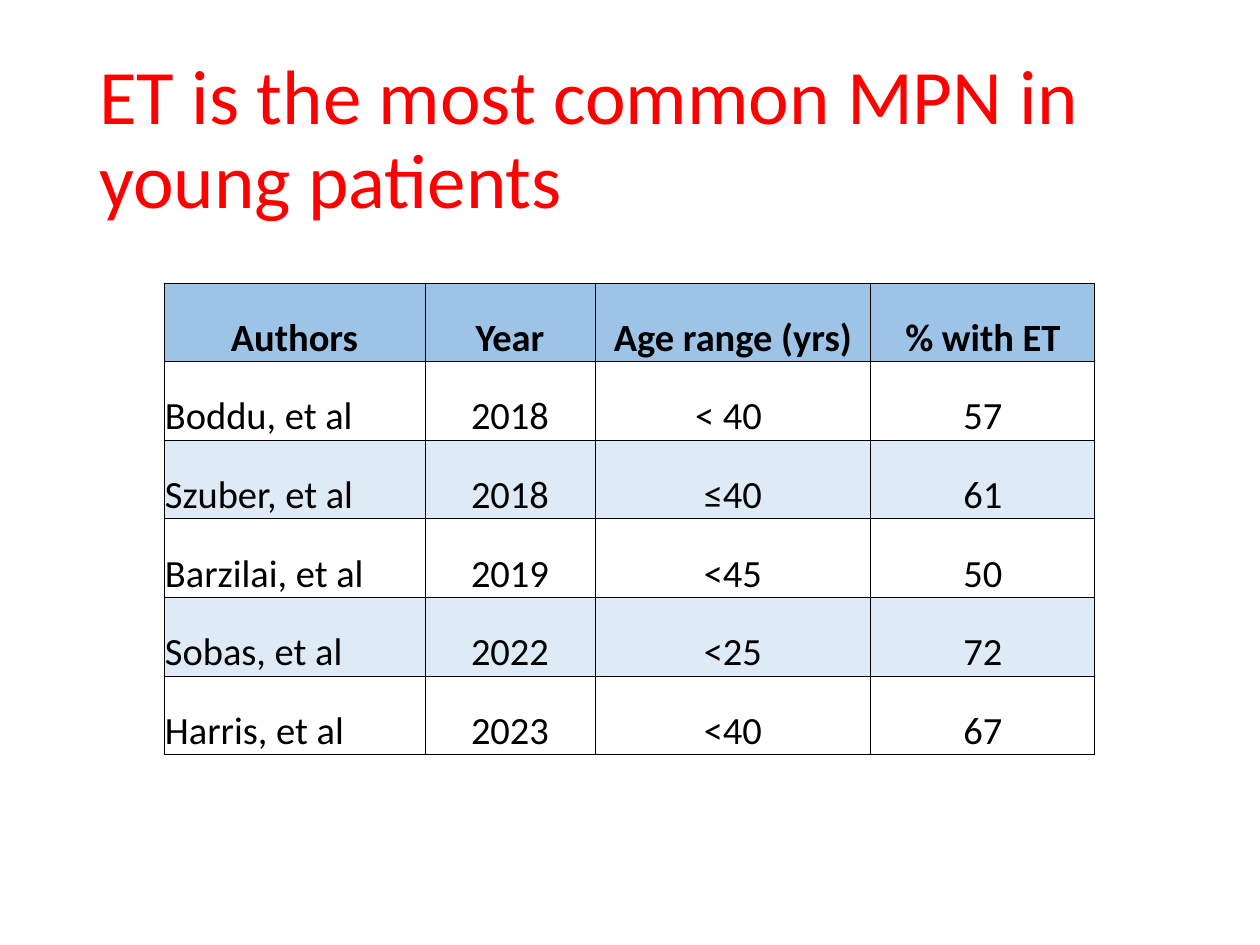
from dataclasses import dataclass

from pptx import Presentation
from pptx.dml.color import RGBColor as RGB
from pptx.enum.text import MSO_ANCHOR as ANCHOR, PP_ALIGN as ALIGN
from pptx.oxml import parse_xml
from pptx.oxml.ns import nsdecls
from pptx.util import Pt

TITLE = "ET is the most common MPN in young patients"
HEADER = ("Authors", "Year", "Age range (yrs)", "% with ET")
STUDIES = [
    ("Boddu, et al", "2018", "< 40 ", "57"),
    ("Szuber, et al", "2018", "≤40", "61"),
    ("Barzilai, et al", "2019", "<45", "50"),
    ("Sobas, et al", "2022", "<25", "72"),
    ("Harris, et al", "2023", "<40", "67"),
]

SCALE = 914400 / 126
SLIDE = (1260, 945)
TITLE_BOX = (87, 50, 1086, 183)
TABLE_AT = (164, 283)
TABLE_HEIGHT = 472
COL_WIDTHS = (261, 170, 276, 224)


@dataclass(frozen=True)
class Theme:
    font: str = "Calibri"
    title: str = "FF0000"
    text: str = "000000"
    border: str = "000000"
    header: str = "9DC3E6"
    band: str = "DEEBF7"
    title_size: int = 44
    cell_size: int = 22
    border_size: float = 0.5


THEME = Theme()


def px(n):
    return round(n * SCALE)


def apply(obj, values):
    for name, value in values.items():
        setattr(obj, name, value)


def write(tf, text, size, color, bold=False, align=ALIGN.LEFT):
    p = tf.paragraphs[0]
    p.alignment = align
    r = p.add_run()
    r.text = text
    apply(r.font, {"name": THEME.font, "size": Pt(size), "bold": bold})
    r.font.color.rgb = RGB.from_string(color)
    return p


def add_borders(cell):
    tc_pr = cell._tc.get_or_add_tcPr()
    for side in "LRTB":
        tc_pr.append(parse_xml(
            f'<a:ln{side} {nsdecls("a")} w="{Pt(THEME.border_size)}">'
            f'<a:solidFill><a:srgbClr val="{THEME.border}"/></a:solidFill>'
            f'</a:ln{side}>'))


def fill_cell(cell, color):
    if color:
        cell.fill.solid()
        cell.fill.fore_color.rgb = RGB.from_string(color)
    else:
        cell.fill.background()


def add_title(s):
    tf = s.shapes.add_textbox(*map(px, TITLE_BOX)).text_frame
    apply(tf, {"word_wrap": True, "vertical_anchor": ANCHOR.MIDDLE})
    p = write(tf, TITLE, THEME.title_size, THEME.title)
    p.line_spacing = 0.9


def add_studies(s):
    rows = [HEADER, *STUDIES]
    size = (sum(COL_WIDTHS), TABLE_HEIGHT)
    table = s.shapes.add_table(
        len(rows), len(HEADER), *map(px, TABLE_AT + size)).table
    apply(table, {"first_row": False, "horz_banding": False})
    for col, width in zip(table.columns, COL_WIDTHS):
        col.width = px(width)
    cell_format = {"vertical_anchor": ANCHOR.BOTTOM, "margin_left": px(1),
                   "margin_right": px(1), "margin_top": px(1), "margin_bottom": 0}
    for i, row in enumerate(rows):
        is_header = i == 0
        color = THEME.header if is_header else None if i % 2 else THEME.band
        for j, text in enumerate(row):
            cell = table.cell(i, j)
            apply(cell, cell_format)
            add_borders(cell)
            fill_cell(cell, color)
            align = ALIGN.CENTER if is_header or j else ALIGN.LEFT
            write(cell.text_frame, text, THEME.cell_size, THEME.text,
                  is_header, align)


def main():
    prs = Presentation()
    prs.slide_width, prs.slide_height = map(px, SLIDE)
    s = prs.slides.add_slide(prs.slide_layouts[6])
    add_title(s)
    add_studies(s)
    prs.save("out.pptx")


if __name__ == "__main__":
    main()
